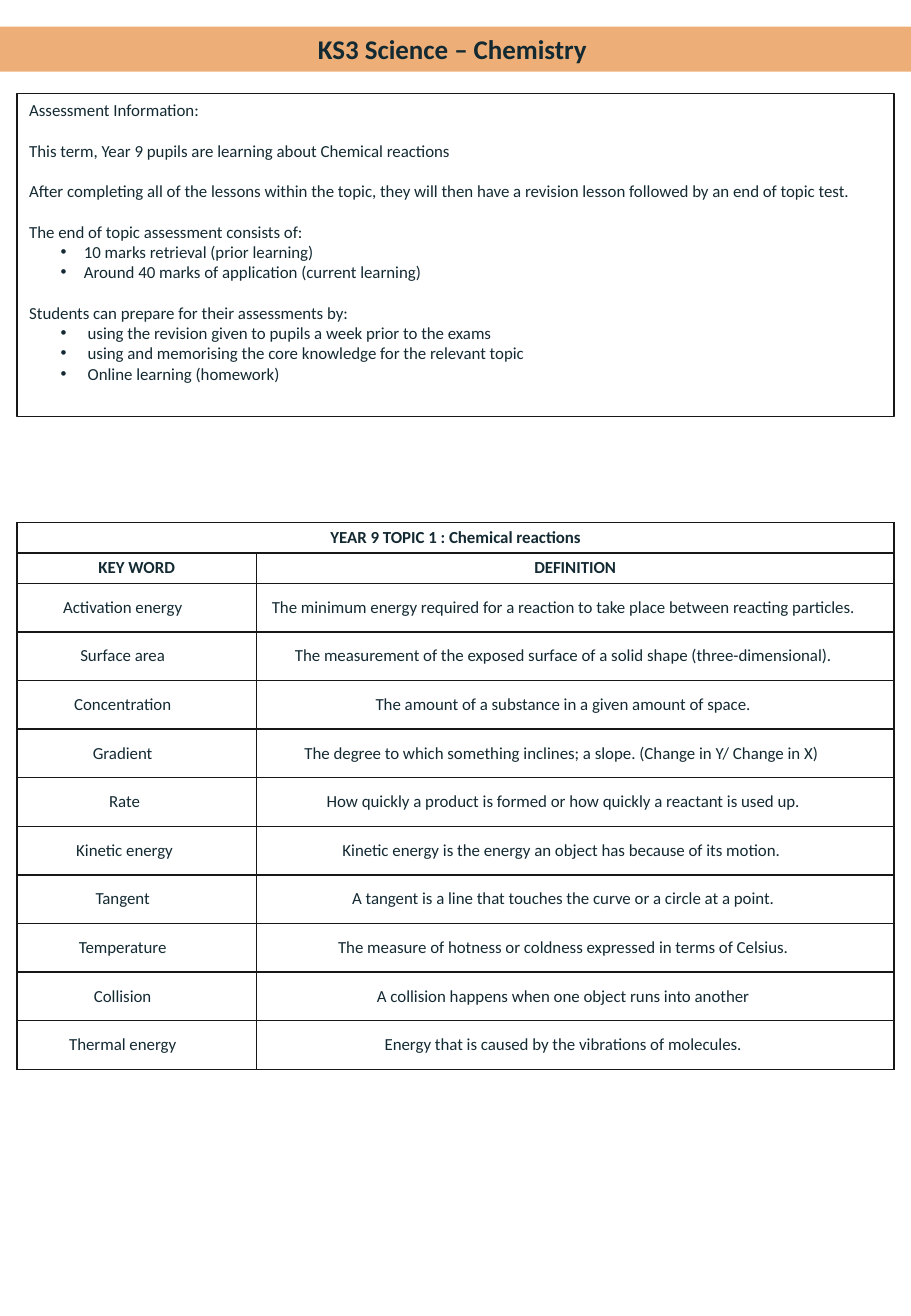
from dataclasses import dataclass

from lxml import etree
from pptx import Presentation
from pptx.dml.color import RGBColor as RGB
from pptx.enum.text import MSO_ANCHOR as Anchor, MSO_AUTO_SIZE as AutoSize, PP_ALIGN as Align
from pptx.oxml.ns import qn
from pptx.util import Inches, Pt


@dataclass(frozen=True)
class Theme:
    font: str = "Calibri"
    ink: str = "142A33"
    rule: str = "181717"
    banner: str = "EDAF77"
    title_pt: int = 16
    text_pt: int = 10
    box_pt: float = 0.75
    grid_pt: int = 1
    line_gap: int = 12


THEME = Theme()

# Each group of lines: lead line, then its bullets
ASSESSMENT = [
    ("Assessment Information: ", []),
    ("This term, Year 9 pupils are learning about Chemical reactions", []),
    ("After completing all of the lessons within the topic, they will then have "
     "a revision lesson followed by an end of topic test. ", []),
    ("The end of topic assessment consists of:", [
        "10 marks retrieval (prior learning)",
        "Around 40 marks of application (current learning)"]),
    ("Students can prepare for their assessments by:", [
        " using the revision given to pupils a week prior to the exams",
        " using and memorising the core knowledge for the relevant topic",
        " Online learning (homework)"]),
]

KEY_WORDS = [
    ("Activation energy ", "The minimum energy required for a reaction to take place "
                           "between reacting particles."),
    ("Surface area ", "The measurement of the exposed surface of a solid shape "
                      "(three-dimensional)."),
    ("Concentration ", "The amount of a substance in a given amount of space."),
    ("Gradient ", "The degree to which something inclines; a slope. "
                  "(Change in Y/ Change in X) "),
    ("Rate", "How quickly a product is formed or how quickly a reactant is used up."),
    ("Kinetic energy", "Kinetic energy is the energy an object has because of its motion. "),
    ("Tangent ", "A tangent is a line that touches the curve or a circle at a point."),
    ("Temperature ", "The measure of hotness or coldness expressed in terms of Celsius."),
    ("Collision ", "A collision happens when one object runs into another"),
    ("Thermal energy ", "Energy that is caused by the vibrations of molecules."),
]


def place(shape, box):
    shape.left, shape.top, shape.width, shape.height = (Inches(v) for v in box)


def add_run(p, text, size=THEME.text_pt, bold=False):
    r = p.add_run()
    r.text = text
    r.font.name, r.font.size, r.font.bold = THEME.font, Pt(size), bold
    r.font.color.rgb = RGB.from_string(THEME.ink)


def set_bullet(p, char=None, margin=0.0, indent=0.0):
    pPr = p._p.get_or_add_pPr()
    pPr.set("marL", str(Inches(margin)))
    pPr.set("indent", str(Inches(indent)))
    if char:
        etree.SubElement(pPr, qn("a:buFont")).set("typeface", "Arial")
        etree.SubElement(pPr, qn("a:buChar")).set("char", char)
    else:
        etree.SubElement(pPr, qn("a:buNone"))


def set_borders(cell):
    tcPr = cell._tc.get_or_add_tcPr()
    for i, side in enumerate(("a:lnL", "a:lnR", "a:lnT", "a:lnB")):
        ln = etree.Element(qn(side), w=str(Pt(THEME.grid_pt)))
        fill = etree.SubElement(ln, qn("a:solidFill"))
        etree.SubElement(fill, qn("a:srgbClr")).set("val", THEME.rule)
        tcPr.insert(i, ln)


def add_banner(s, box):
    title = s.shapes.title
    place(title, box)
    title.fill.solid()
    title.fill.fore_color.rgb = RGB.from_string(THEME.banner)
    tf = title.text_frame
    tf.auto_size, tf.vertical_anchor = AutoSize.NONE, Anchor.MIDDLE
    p = tf.paragraphs[0]
    p.alignment = Align.CENTER
    add_run(p, "KS3 Science – Chemistry ", THEME.title_pt, True)


def add_assessment(s, box):
    body = s.placeholders[1]
    place(body, box)
    body.line.color.rgb = RGB.from_string(THEME.rule)
    body.line.width = Pt(THEME.box_pt)
    tf = body.text_frame
    tf.auto_size, tf.vertical_anchor = AutoSize.NONE, Anchor.TOP
    for i, (lead, bullets) in enumerate(ASSESSMENT):
        p = tf.add_paragraph() if i else tf.paragraphs[0]
        set_bullet(p)
        p.space_before = Pt(THEME.line_gap if i else 0)
        add_run(p, lead)
        for text in bullets:
            p = tf.add_paragraph()
            p.level = 1
            set_bullet(p, "•", 0.45, -0.19)
            p.space_before = Pt(0)
            add_run(p, text)


def fill_cell(cell, text, header):
    # Definition rows sit slightly left of centre
    insets = (0.08, 0.04, 0.08, 0.04) if header else (0.07, 0, 0.27, 0)
    (cell.margin_left, cell.margin_top,
     cell.margin_right, cell.margin_bottom) = (Inches(v) for v in insets)
    cell.vertical_anchor = Anchor.MIDDLE
    cell.fill.background()
    set_borders(cell)
    p = cell.text_frame.paragraphs[0]
    p.alignment = Align.CENTER
    if not header:
        p.space_after = Pt(6)
    if text:
        add_run(p, text, bold=header)


def add_key_words(s, box):
    rows = [("YEAR 9 TOPIC 1 : Chemical reactions", ""),
            ("KEY WORD", "DEFINITION"), *KEY_WORDS]
    table = s.shapes.add_table(len(rows), 2, *(Inches(v) for v in box)).table
    table.first_row = table.horz_banding = False
    key_width = 1.97
    table.columns[0].width = Inches(key_width)
    table.columns[1].width = Inches(box[2] - key_width)
    for i, texts in enumerate(rows):
        header = i < 2
        table.rows[i].height = Inches(0.25 if header else 0.4)
        for j, text in enumerate(texts):
            fill_cell(table.cell(i, j), text, header)
    table.cell(0, 0).merge(table.cell(0, 1))


def main():
    prs = Presentation()
    prs.slide_width, prs.slide_height = Inches(7.5), Inches(10.83)
    s = prs.slides.add_slide(prs.slide_layouts[1])
    left, width = 0.14, 7.22
    add_banner(s, (0, 0.22, 7.5, 0.37))
    add_assessment(s, (left, 0.77, width, 2.66))
    add_key_words(s, (left, 4.3, width, 4.5))
    prs.save("out.pptx")


if __name__ == "__main__":
    main()
